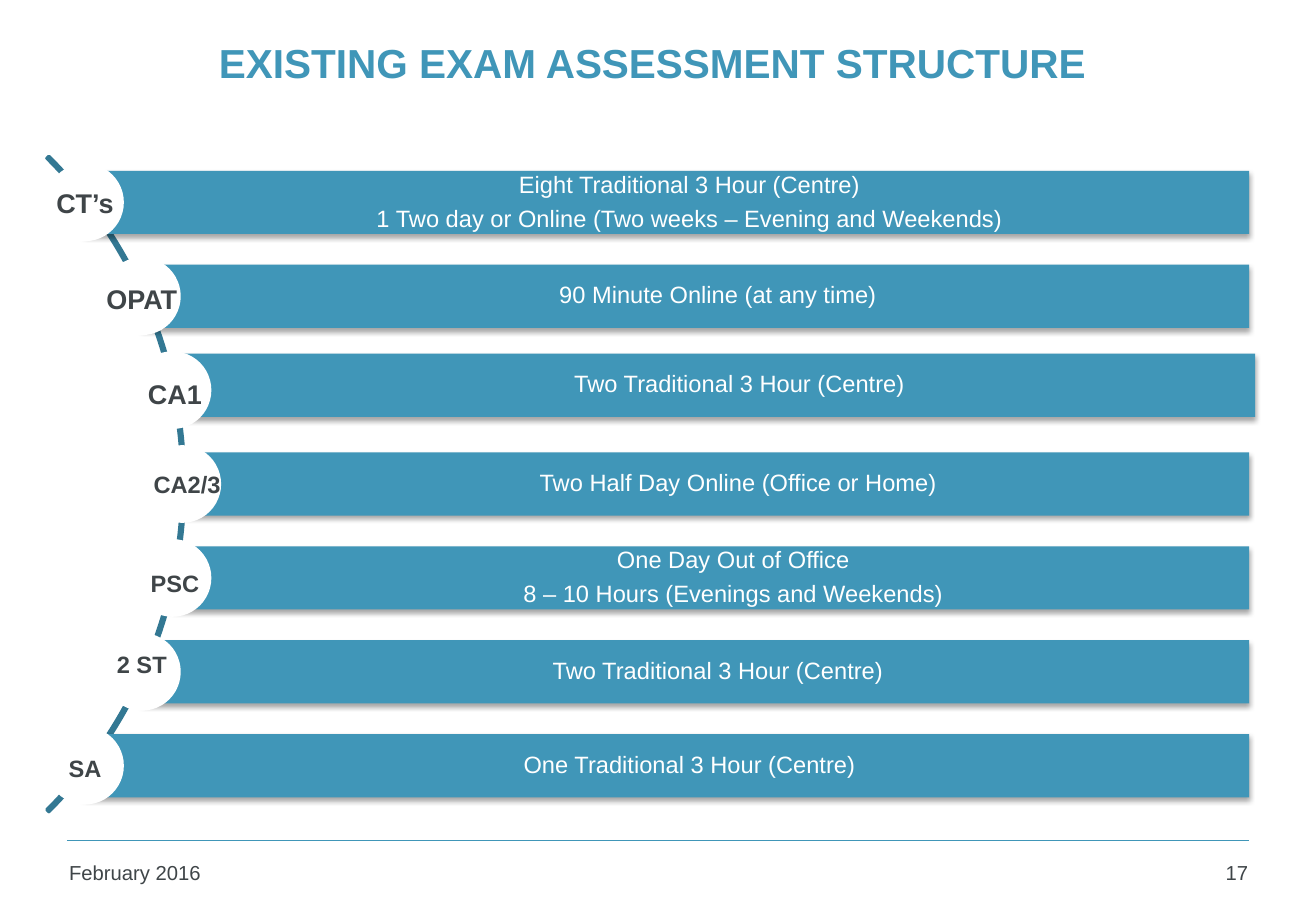
from math import sqrt
from lxml import etree
from pptx import Presentation
from pptx.dml.color import RGBColor
from pptx.enum.shapes import MSO_CONNECTOR, MSO_SHAPE
from pptx.enum.text import MSO_ANCHOR, PP_ALIGN
from pptx.oxml.ns import qn
from pptx.util import Inches, Pt

LEFT, CENTER, RIGHT = PP_ALIGN.LEFT, PP_ALIGN.CENTER, PP_ALIGN.RIGHT
MIDDLE = MSO_ANCHOR.MIDDLE
RECTANGLE, OVAL, BLOCK_ARC = MSO_SHAPE.RECTANGLE, MSO_SHAPE.OVAL, MSO_SHAPE.BLOCK_ARC

# Content
TITLE = "EXISTING EXAM ASSESSMENT STRUCTURE"
DATE, PAGE_NUMBER = "February 2016", "17"
# label, label size, label nudge from circle centre, bar nudge, bar lines
STAGES = [
    ("CT’s", 16, (0, 0), (0, 0), ["Eight Traditional 3 Hour (Centre)",
     "1 Two day or Online (Two weeks – Evening and Weekends)"]),
    ("OPAT", 16, (0, 0.02), (0, 0), ["90 Minute Online (at any time)"]),
    ("CA1", 16, (0.02, 0.03), (0.05, -0.04), ["Two Traditional 3 Hour (Centre)"]),
    ("CA2/3", 14, (0.04, 0), (0, 0), ["Two Half Day Online (Office or Home)"]),
    ("PSC", 14, (0.02, 0.04), (0, 0), ["One Day Out of Office",
     "8 – 10 Hours (Evenings and Weekends)"]),
    ("2 ST", 14, (0, -0.06), (0, 0), ["Two Traditional 3 Hour (Centre)"]),
    ("SA", 14, (0, 0.02), (0, 0), ["One Traditional 3 Hour (Centre)"]),
]
COLORS = {"blue": "4096B8", "arc": "337893", "text": "3F4548", "white": "FFFFFF"}
FONT = "Arial"

# Layout, in inches
WIDTH, HEIGHT = 10.83, 7.5
MARGIN, RIGHT_EDGE = 0.55, 10.28
MIDDLE_Y, ROW_STEP = 3.985, 0.773
BAR_HEIGHT, CIRCLE = 0.52, 0.64
CURVE_X, CURVE_RADIUS = 1.5, 3.76
ARC_LEFT, ARC_SIZE = -6.11, 7.63
LABEL_WIDTH, LABEL_HEIGHT = 0.9, 0.34

deck = Presentation()
deck.slide_width, deck.slide_height = Inches(WIDTH), Inches(HEIGHT)
page = deck.slides.add_slide(deck.slide_layouts[6])


def color(name):
    return RGBColor.from_string(COLORS[name])


def write(shape, lines, size, tint, align, bold=False, insets=(0.1, 0.05, 0.1, 0.05)):
    frame = shape.text_frame
    frame.text = "\n".join(lines)
    frame.vertical_anchor = MIDDLE
    (frame.margin_left, frame.margin_top,
     frame.margin_right, frame.margin_bottom) = map(Inches, insets)
    for para in frame.paragraphs:
        para.alignment = align
        for span in para.runs:
            span.font.name, span.font.size, span.font.bold = FONT, Pt(size), bold
            span.font.color.rgb = color(tint)
    return frame


def add_text(text, left, top, width, height, size, tint, align, **options):
    box = page.shapes.add_textbox(*map(Inches, (left, top, width, height)))
    frame = write(box, [text], size, tint, align, **options)
    frame.word_wrap = True


def add_solid(kind, left, top, width, height, fill):
    shape = page.shapes.add_shape(kind, *map(Inches, (left, top, width, height)))
    shape.shadow.inherit = False
    shape.fill.solid()
    shape.fill.fore_color.rgb = color(fill)
    shape.line.fill.background()
    return shape


def add_drop_shadow(shape):
    effects = shape.element.spPr.find(qn("a:effectLst"))
    shadow = etree.SubElement(effects, qn("a:outerShdw"), blurRad=str(Pt(3.1)),
                              dist=str(Pt(1.8)), dir="5400000", rotWithShape="0")
    black = etree.SubElement(shadow, qn("a:srgbClr"), val="000000")
    etree.SubElement(black, qn("a:alpha"), val="35000")


# Footer rule, date and title
rule = page.shapes.add_connector(MSO_CONNECTOR.STRAIGHT, Inches(MARGIN), Inches(6.92),
                                 Inches(RIGHT_EDGE), Inches(6.92))
rule.line.color.rgb, rule.line.width = color("blue"), Pt(1)
etree.SubElement(rule.element.spPr, qn("a:effectLst"))
add_text(DATE, 0.47, 7, 2.39, 0.36, 12, "text", LEFT)
add_text(PAGE_NUMBER, 9.6, 7, 0.77, 0.36, 12, "text", RIGHT)
add_text(TITLE, 0.46, 0.28, 9.82, 0.47, 24, "blue", CENTER, bold=True)

# Arc behind the stages
arc = add_solid(BLOCK_ARC, ARC_LEFT, MIDDLE_Y - ARC_SIZE / 2, ARC_SIZE, ARC_SIZE, "arc")
for index, value in enumerate((189, 27, 0.003)):
    arc.adjustments[index] = value
arc.line.color.rgb, arc.line.width = color("arc"), Pt(2)

# Stages: bar, circle and label, centred along the curve
for row, (label, size, label_nudge, bar_nudge, lines) in enumerate(STAGES):
    drop = (row - (len(STAGES) - 1) / 2) * ROW_STEP
    x = CURVE_X - CURVE_RADIUS + sqrt(CURVE_RADIUS ** 2 - drop ** 2)
    y = MIDDLE_Y + drop

    bar = add_solid(RECTANGLE, x + bar_nudge[0], y - BAR_HEIGHT / 2 + bar_nudge[1],
                    RIGHT_EDGE - x, BAR_HEIGHT, "blue")
    add_drop_shadow(bar)
    frame = write(bar, lines, 14, "white", CENTER, insets=(0.41, 0.04, 0.04, 0.04))
    for para in frame.paragraphs:
        para.line_spacing, para.space_after = 0.9, Pt(5)

    add_solid(OVAL, x - CIRCLE / 2, y - CIRCLE / 2, CIRCLE, CIRCLE, "white")
    add_text(label, x - LABEL_WIDTH / 2 + label_nudge[0],
             y - LABEL_HEIGHT / 2 + label_nudge[1], LABEL_WIDTH, LABEL_HEIGHT,
             size, "text", CENTER, bold=True, insets=(0, 0, 0, 0))

deck.save("out.pptx")
